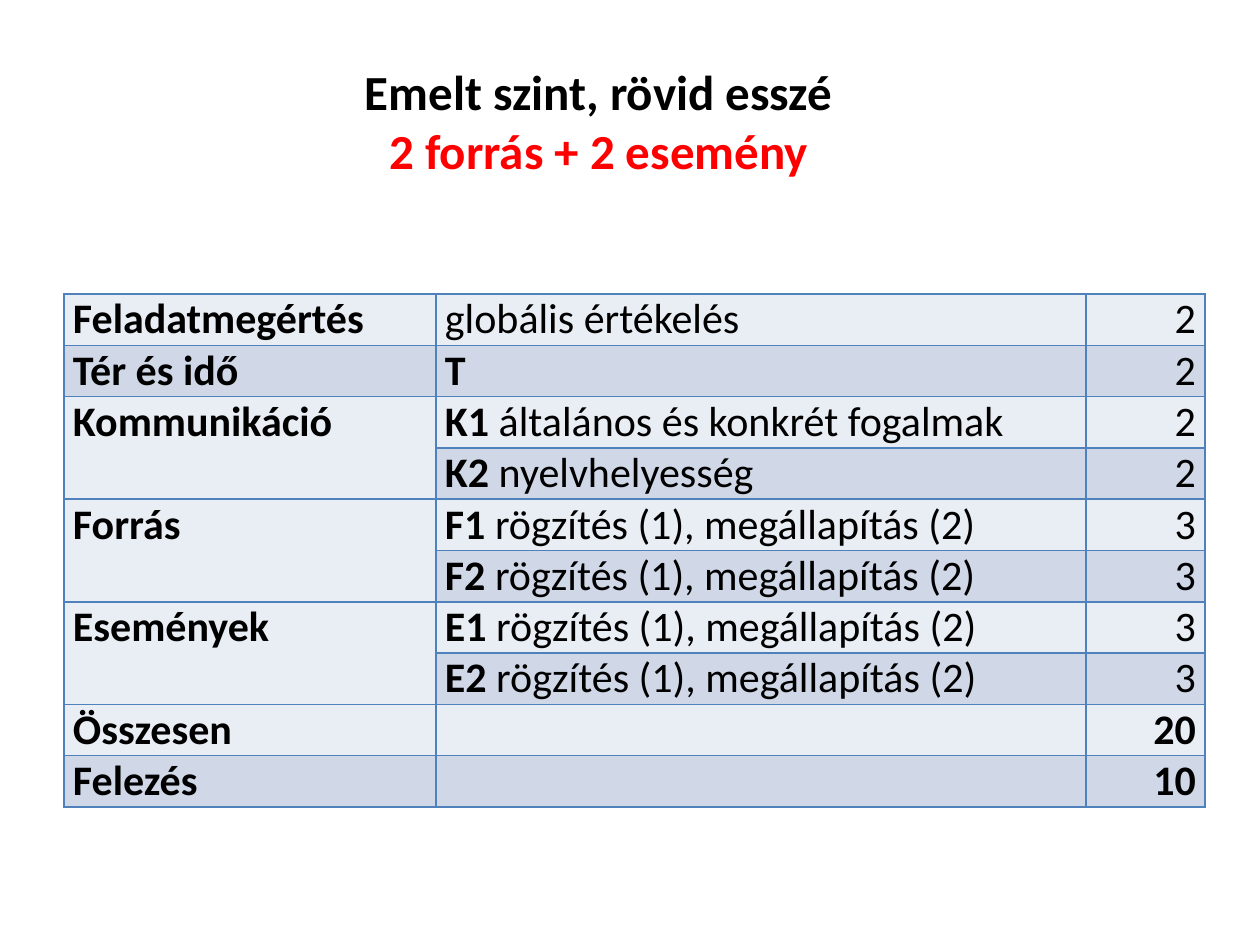
from pptx import Presentation
from pptx.dml.color import RGBColor
from pptx.enum.text import MSO_ANCHOR, PP_ALIGN
from pptx.oxml import parse_xml
from pptx.oxml.ns import nsdecls

UNIT = 914400 / 126
POINT = 12700


def emu(px):
    return round(px * UNIT)


def tint(code):
    return RGBColor.from_string(code)


def apply(item, form):
    for name, value in form.items():
        setattr(item, name, value)


class Deck:
    font = "Calibri"
    ink = "000000"
    edge = "4F81BD"
    bands = ("E9EDF4", "D0D8E8")
    inset = {
        "margin_left": emu(9), "margin_right": emu(9),
        "margin_top": 0, "margin_bottom": 0,
    }

    def __init__(self, wide, high):
        self.file = Presentation()
        apply(self.file, {"slide_width": emu(wide), "slide_height": emu(high)})
        self.slide = self.file.slides.add_slide(self.file.slide_layouts[5])

    def label(self, para, text, size, bold=True, color=ink):
        run = para.add_run()
        run.text = text
        apply(run.font, {"name": self.font, "size": size * POINT, "bold": bold})
        run.font.color.rgb = tint(color)

    def title(self, box, lines):
        shape = self.slide.shapes.title
        apply(shape, dict(zip(("left", "top", "width", "height"), map(emu, box))))
        frame = shape.text_frame
        apply(frame, {"word_wrap": False, "vertical_anchor": MSO_ANCHOR.MIDDLE})
        for i, (text, color) in enumerate(lines):
            para = frame.add_paragraph() if i else frame.paragraphs[0]
            para.alignment = PP_ALIGN.CENTER
            self.label(para, text, 28, color=color)

    def border(self, cell):
        props = cell._tc.get_or_add_tcPr()
        for i, side in enumerate("LRTB"):
            props.insert(i, parse_xml(
                f'<a:ln{side} {nsdecls("a")} w="{POINT}"><a:solidFill>'
                f'<a:srgbClr val="{self.edge}"/></a:solidFill></a:ln{side}>'))

    def table(self, left, top, cols, high, rows):
        grid = self.slide.shapes.add_table(
            len(rows), len(cols), emu(left), emu(top),
            emu(sum(cols)), emu(high * len(rows))).table
        apply(grid, {"first_row": False, "horz_banding": False})
        for col, wide in zip(grid.columns, cols):
            col.width = emu(wide)
        for i, (head, code, note, score) in enumerate(rows):
            grid.rows[i].height = emu(high)
            total = not code and not note
            parts = ([(head, True)], [(code, True), (note, False)], [(score, total)])
            for j, runs in enumerate(parts):
                cell = grid.cell(i, j)
                apply(cell, self.inset)
                cell.fill.solid()
                cell.fill.fore_color.rgb = tint(self.bands[i % 2])
                self.border(cell)
                para = cell.text_frame.paragraphs[0]
                para.alignment = PP_ALIGN.RIGHT if j == 2 else PP_ALIGN.LEFT
                for text, bold in runs:
                    if text:
                        self.label(para, text, 24, bold)
            if not head:
                grid.cell(i - 1, 0).merge(grid.cell(i, 0))


def main():
    deck = Deck(1260, 945)
    deck.title((343, 55, 511, 131), [
        ("Emelt szint, rövid esszé", "000000"),
        ("2 forrás + 2 esemény", "FF0000"),
    ])
    task = " rögzítés (1), megállapítás (2)"
    deck.table(64, 294, (372, 650, 119), 50, [
        ("Feladatmegértés", "", "globális értékelés", "2"),
        ("Tér és idő", "T", "", "2"),
        ("Kommunikáció", "K1", " általános és konkrét fogalmak", "2"),
        ("", "K2", " nyelvhelyesség", "2"),
        ("Forrás", "F1", task, "3"),
        ("", "F2", task, "3"),
        ("Események", "E1", task, "3"),
        ("", "E2", task, "3"),
        ("Összesen", "", "", "20"),
        ("Felezés", "", "", "10"),
    ])
    deck.file.save("out.pptx")


if __name__ == "__main__":
    main()
